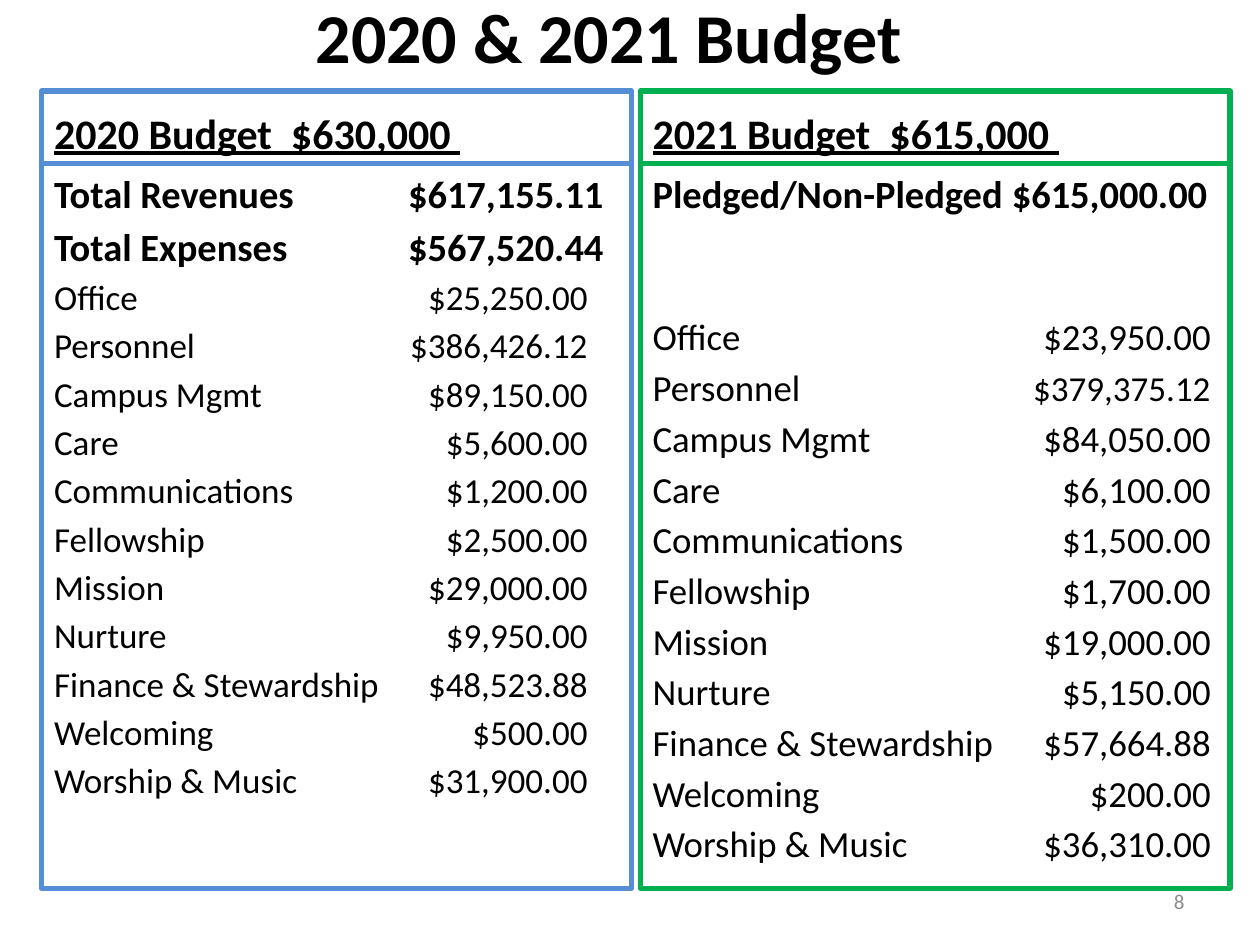
from lxml.etree import SubElement
from pptx import Presentation
from pptx.dml.color import RGBColor
from pptx.enum.shapes import MSO_SHAPE as Shape
from pptx.enum.text import MSO_ANCHOR as Anchor, PP_ALIGN as Align
from pptx.oxml.ns import qn
from pptx.util import Pt

COLORS = {"blue": "558ED5", "green": "00B050", "text": "000000", "number": "8C8C8C"}
FONT = "Calibri"
TOTAL_SIZE = 22
PANEL_WIDTH, PANEL_TOP, HEADING_HEIGHT, BODY_HEIGHT = 337, 52, 41.6, 414

CATEGORIES = ["Office", "Personnel", "Campus Mgmt", "Care", "Communications",
              "Fellowship", "Mission", "Nurture", "Finance & Stewardship",
              "Welcoming", "Worship & Music"]

BUDGETS = [
    dict(heading="2020 Budget  $630,000 ", color="blue", left=23.8,
         totals=[("Total Revenues", "$617,155.11"), ("Total Expenses", "$567,520.44")],
         amounts=["$25,250.00", "$386,426.12", "$89,150.00", "$5,600.00", "$1,200.00",
                  "$2,500.00", "$29,000.00", "$9,950.00", "$48,523.88", "$500.00",
                  "$31,900.00"],
         size=20, first_gap=3.6, total_tab=314, amount_tab=305, amount_sizes={}),
    dict(heading="2021 Budget  $615,000 ", color="green", left=365.8,
         totals=[("Pledged/Non-Pledged", "$615,000.00")],
         amounts=["$23,950.00", "$379,375.12", "$84,050.00", "$6,100.00", "$1,500.00",
                  "$1,700.00", "$19,000.00", "$5,150.00", "$57,664.88", "$200.00",
                  "$36,310.00"],
         size=21, first_gap=56, total_tab=317, amount_tab=319,
         amount_sizes={"Personnel": 20}),
]


def rgb(name):
    return RGBColor.from_string(COLORS[name])


def style(paragraph, size, bold=False, color="text", align=Align.LEFT):
    paragraph.alignment = align
    font = paragraph.font
    font.name, font.size, font.bold = FONT, Pt(size), bold
    font.color.rgb = rgb(color)


def add_label(slide, text, left, top, width, height, size, **look):
    frame = slide.shapes.add_textbox(Pt(left), Pt(top), Pt(width), Pt(height)).text_frame
    frame.word_wrap = True
    frame.vertical_anchor = Anchor.MIDDLE
    label = frame.paragraphs[0]
    label.text = text
    style(label, size, **look)


def add_panel(slide, left, top, height, color, anchor):
    """Add an unfilled outlined rectangle and return its text frame."""
    panel = slide.shapes.add_shape(Shape.RECTANGLE, Pt(left), Pt(top),
                                   Pt(PANEL_WIDTH), Pt(height))
    panel.shadow.inherit = False
    panel.fill.background()
    panel.line.color.rgb = rgb(color)
    panel.line.width = Pt(3)
    frame = panel.text_frame
    frame.word_wrap = True
    frame.vertical_anchor = anchor
    return frame


def add_right_tab(paragraph, position):
    tabs = SubElement(paragraph._p.get_or_add_pPr(), qn("a:tabLst"))
    SubElement(tabs, qn("a:tab"), pos=str(Pt(position)), algn="r")


def write_entry(paragraph, label, amount, size, tab, gap, bold=False, amount_size=None):
    """Write a label with its amount aligned right at the tab stop."""
    paragraph.add_run().text = f"{label}\t"
    amount_run = paragraph.add_run()
    amount_run.text = amount
    if amount_size:
        amount_run.font.size = Pt(amount_size)
    paragraph.space_before = Pt(gap)
    add_right_tab(paragraph, tab)
    style(paragraph, size, bold)


def add_budget(slide, budget):
    left, color, size = budget["left"], budget["color"], budget["size"]
    heading = add_panel(slide, left, PANEL_TOP, HEADING_HEIGHT, color,
                        Anchor.BOTTOM).paragraphs[0]
    heading.text = budget["heading"]
    style(heading, 24, bold=True)
    heading.font.underline = True

    body = add_panel(slide, left, PANEL_TOP + HEADING_HEIGHT, BODY_HEIGHT, color, Anchor.TOP)
    for index, (label, amount) in enumerate(budget["totals"]):
        paragraph = body.add_paragraph() if index else body.paragraphs[0]
        write_entry(paragraph, label, amount, TOTAL_SIZE, budget["total_tab"],
                    0.18 * TOTAL_SIZE, bold=True)
    for index, (label, amount) in enumerate(zip(CATEGORIES, budget["amounts"])):
        gap = 0.18 * size if index else budget["first_gap"]
        write_entry(body.add_paragraph(), label, amount, size, budget["amount_tab"], gap,
                    amount_size=budget["amount_sizes"].get(label))


def main():
    deck = Presentation()
    deck.slide_width, deck.slide_height = Pt(720), Pt(540)
    slide = deck.slides.add_slide(deck.slide_layouts[6])
    add_label(slide, "2020 & 2021 Budget", 23.8, 1.5, 648, 38, 40,
              bold=True, align=Align.CENTER)
    for budget in BUDGETS:
        add_budget(slide, budget)
    add_label(slide, "8", 516, 500.5, 168, 28.8, 12, color="number", align=Align.RIGHT)
    deck.save("out.pptx")


if __name__ == "__main__":
    main()
